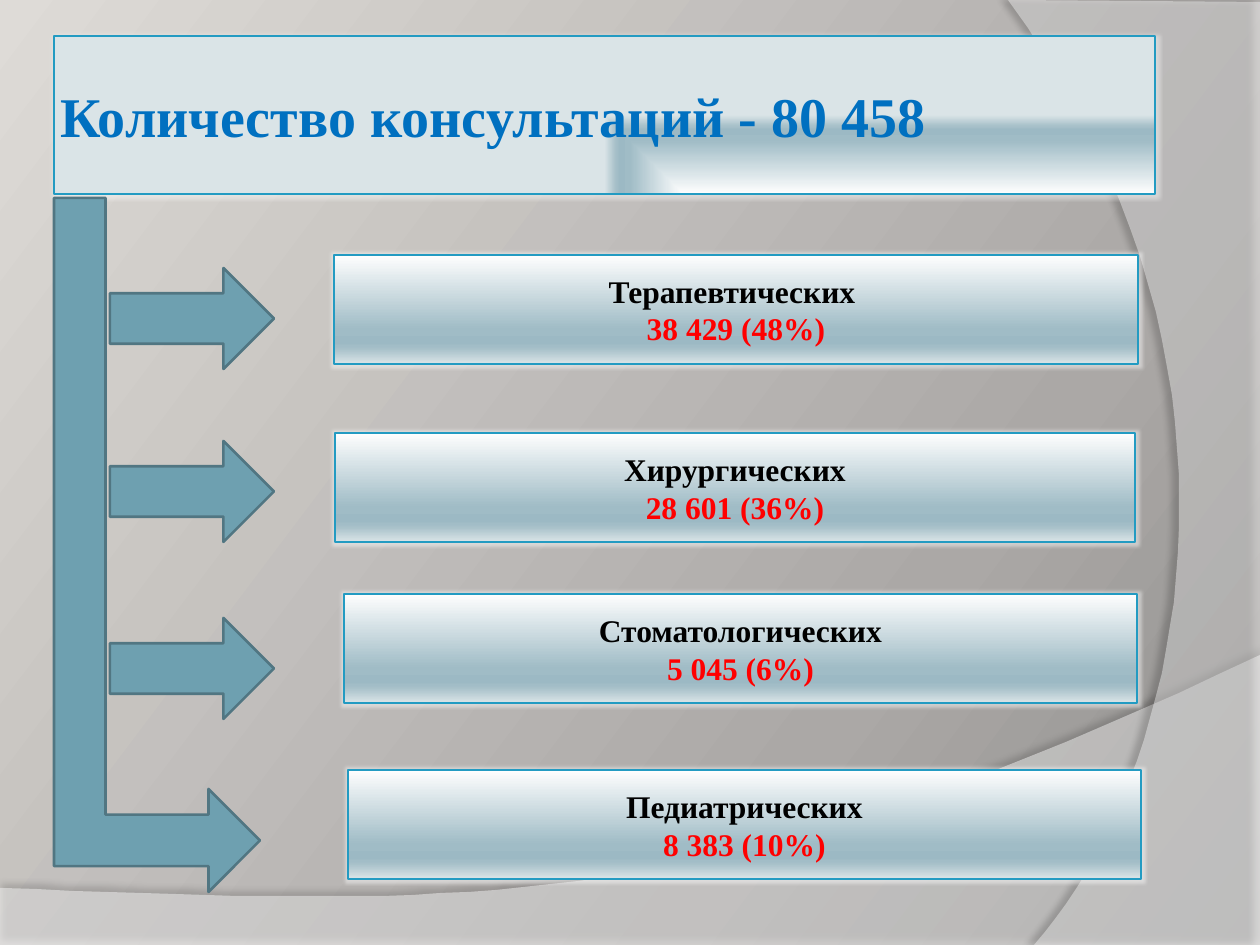
from dataclasses import dataclass

from lxml.etree import SubElement
from pptx import Presentation
from pptx.dml.color import RGBColor
from pptx.enum.shapes import MSO_SHAPE
from pptx.enum.text import MSO_ANCHOR, MSO_AUTO_SIZE, PP_ALIGN
from pptx.oxml.ns import qn
from pptx.util import Emu, Pt

PIXELS_PER_INCH = 126


def px(value):
    return Emu(round(value * 914400 / PIXELS_PER_INCH))


@dataclass(frozen=True)
class Theme:
    font: str = "Times New Roman"
    title_size: int = 32
    body_size: int = 18
    title_color: str = "0070C0"
    label_color: str = "000000"
    value_color: str = "FF0000"
    panel_line: str = "239BC2"
    arrow_fill: str = "6EA0B0"
    arrow_line: str = "517682"
    white: str = "FFFFFF"
    panel_stops: tuple = ((0, "FEFEFE"), (68, "A0BCC6"), (81, "9CB9C4"),
                          (86, "A7C0C9"), (100, "DAE4E7"))
    background_stops: tuple = ((0, "8F8D8B"), (30, "ABA8A6"), (100, "DEDBD7"))


def add_color(parent, color, alpha=100):
    element = SubElement(parent, qn("a:srgbClr"), val=color)
    if alpha < 100:
        SubElement(element, qn("a:alpha"), val=str(alpha * 1000))


def apply_gradient(fill, properties, stops, angle=None):
    fill.solid()
    solid = properties.find(qn("a:solidFill"))
    gradient = SubElement(properties, qn("a:gradFill"), rotWithShape="1")
    properties.replace(solid, gradient)
    stop_list = SubElement(gradient, qn("a:gsLst"))
    for position, color in stops:
        add_color(SubElement(stop_list, qn("a:gs"), pos=str(position * 1000)), color)
    if angle is None:
        corner = SubElement(gradient, qn("a:path"), attrib={"path": "rect"})
        SubElement(corner, qn("a:fillToRect"), l="100000", t="100000")
    else:
        SubElement(gradient, qn("a:lin"), ang=str(angle * 60000), scaled="0")


def curve(start, first, second, end, steps=40):
    points = []
    for step in range(steps + 1):
        t = step / steps
        weights = ((1 - t) ** 3, 3 * t * (1 - t) ** 2, 3 * t ** 2 * (1 - t), t ** 3)
        points.append(tuple(
            sum(weight * value for weight, value in zip(weights, values))
            for values in zip(start, first, second, end)))
    return points


class SlideBuilder:
    def __init__(self, slide, theme):
        self.slide = slide
        self.theme = theme

    def background(self):
        fill = self.slide.background.fill
        fill.solid()
        properties = self.slide.element.find(".//" + qn("p:bgPr"))
        apply_gradient(fill, properties, self.theme.background_stops, 217)

    def effect(self, shape, kind, color, alpha, **settings):
        shape.shadow.inherit = False
        effects = shape.element.spPr.find(qn("a:effectLst"))
        attributes = {name: str(value) for name, value in settings.items()}
        add_color(SubElement(effects, qn(kind), attrib=attributes), color, alpha)

    def wave(self, points, alpha, shadow_alpha, distance, direction):
        builder = self.slide.shapes.build_freeform(*points[0], scale=px(100) / 100)
        builder.add_line_segments(points[1:], close=True)
        shape = builder.convert_to_shape()
        shape.fill.solid()
        shape.fill.fore_color.rgb = RGBColor.from_string(self.theme.white)
        color = shape.element.spPr.find(qn("a:solidFill"))[0]
        SubElement(color, qn("a:alpha"), val=str(alpha * 1000))
        shape.line.fill.background()
        self.effect(shape, "a:outerShdw", "000000", shadow_alpha, blurRad=Pt(4),
                    dist=Pt(distance), dir=direction * 60000, rotWithShape=0)

    def outline(self, shape, color, width):
        shape.line.color.rgb = RGBColor.from_string(color)
        shape.line.width = Pt(width)

    def panel(self, shape, angle=None):
        apply_gradient(shape.fill, shape.element.spPr, self.theme.panel_stops, angle)
        self.outline(shape, self.theme.panel_line, 0.75)
        self.effect(shape, "a:glow", self.theme.white, 45, rad=Pt(4))

    def text(self, paragraph, content, size, color, alignment):
        paragraph.text = content
        paragraph.alignment = alignment
        paragraph.font.name = self.theme.font
        paragraph.font.size = Pt(size)
        paragraph.font.bold = True
        paragraph.font.color.rgb = RGBColor.from_string(color)

    def title(self, content, left, top, width, height):
        shape = self.slide.shapes.title
        shape.element.getparent().append(shape.element)
        shape.left, shape.top = px(left), px(top)
        shape.width, shape.height = px(width), px(height)
        self.panel(shape)
        frame = shape.text_frame
        frame.auto_size = MSO_AUTO_SIZE.NONE
        frame.vertical_anchor = MSO_ANCHOR.MIDDLE
        frame.margin_left = frame.margin_right = px(6)
        frame.margin_top = frame.margin_bottom = px(6)
        self.text(frame.paragraphs[0], content, self.theme.title_size,
                  self.theme.title_color, PP_ALIGN.LEFT)

    def box(self, label, value, left, top, width, height):
        shape = self.slide.shapes.add_shape(
            MSO_SHAPE.FLOWCHART_PROCESS, px(left), px(top), px(width), px(height))
        self.panel(shape, 90)
        frame = shape.text_frame
        frame.word_wrap = True
        frame.vertical_anchor = MSO_ANCHOR.MIDDLE
        size = self.theme.body_size
        self.text(frame.paragraphs[0], label, size, self.theme.label_color, PP_ALIGN.CENTER)
        self.text(frame.add_paragraph(), value, size, self.theme.value_color, PP_ALIGN.CENTER)

    def arrow(self, kind, left, top, width, height, rotation=0):
        shape = self.slide.shapes.add_shape(kind, px(left), px(top), px(width), px(height))
        shape.rotation = rotation
        shape.shadow.inherit = False
        shape.fill.solid()
        shape.fill.fore_color.rgb = RGBColor.from_string(self.theme.arrow_fill)
        self.outline(shape, self.theme.arrow_line, 1.5)


def main():
    presentation = Presentation()
    presentation.slide_width, presentation.slide_height = px(1260), px(945)
    slide = presentation.slides.add_slide(presentation.slide_layouts[5])
    builder = SlideBuilder(slide, Theme())

    builder.background()
    bottom_wave = curve((1260, 655), (704, 919), (493, 906), (0, 888))
    builder.wave([(0, 945), (1260, 945)] + bottom_wave, 45, 35, 3.5, 270)
    right_wave = curve((1034, 945), (1178, 780), (1283, 378), (1008, 0))
    builder.wave([(1260, 2), (1260, 945)] + right_wave, 40, 45, 4, 180)

    builder.title("Количество консультаций - 80 458", 54, 36, 1101, 158)
    consultations = (
        ("Терапевтических ", "38 429 (48%)", 334, 255, 804),
        ("Хирургических", "28 601 (36%)", 335, 433, 800),
        ("Стоматологических", "5 045 (6%)", 344, 594, 793),
        ("Педиатрических", "8 383 (10%)", 348, 770, 793),
    )
    for label, value, left, top, width in consultations:
        builder.box(label, value, left, top, width, 109)

    builder.arrow(MSO_SHAPE.BENT_UP_ARROW, -190, 442, 694, 206, 90)
    for top in (268, 441, 618):
        builder.arrow(MSO_SHAPE.RIGHT_ARROW, 110, top, 164, 101)

    presentation.save("out.pptx")


if __name__ == "__main__":
    main()
